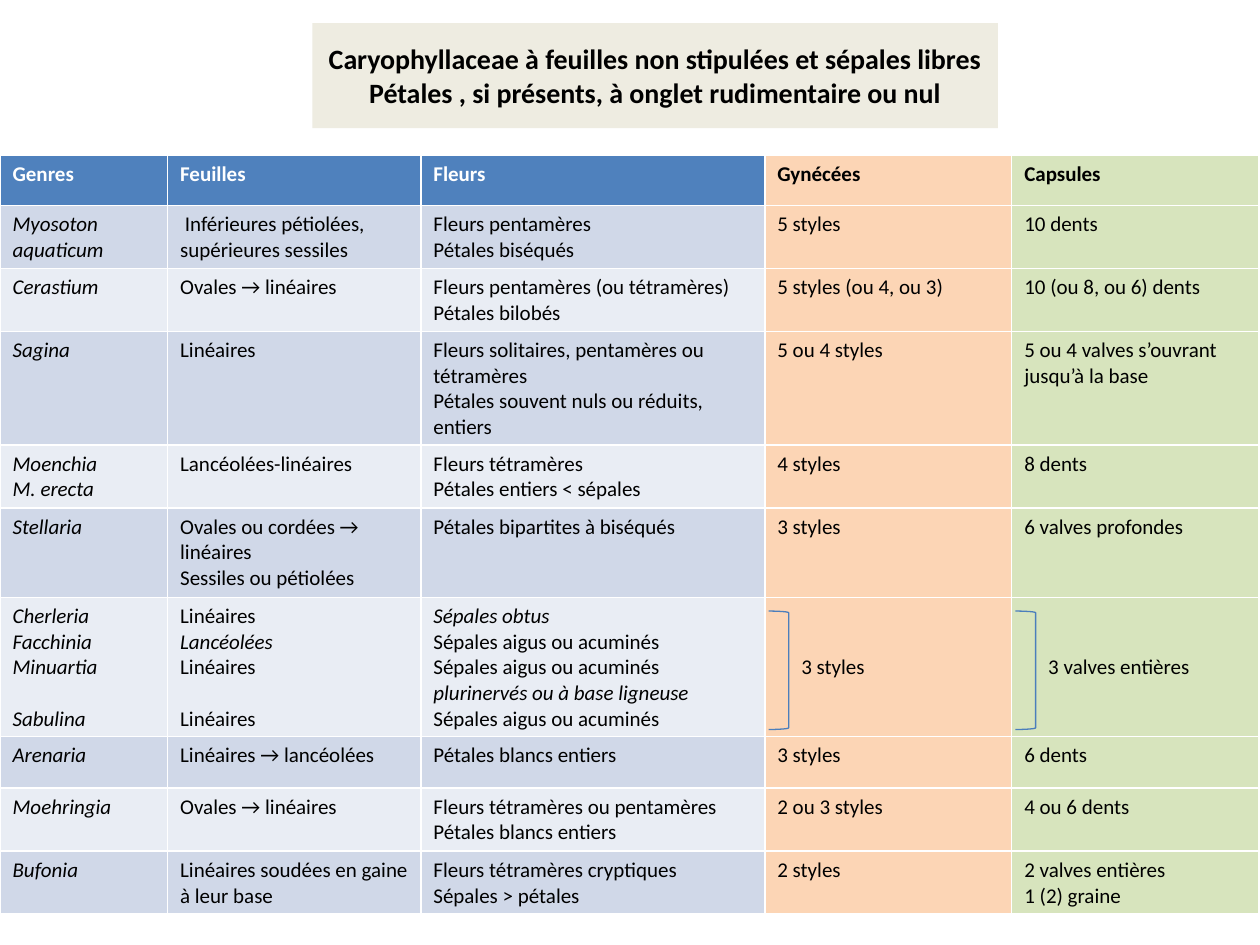
from pptx import Presentation
from pptx.dml.color import RGBColor as Rgb
from pptx.enum.shapes import MSO_SHAPE as Shape
from pptx.enum.text import MSO_ANCHOR as Anchor, MSO_AUTO_SIZE as AutoSize, PP_ALIGN as Align
from pptx.util import Inches, Pt

COLORS = {
    "text": "000000", "header_text": "FFFFFF", "title": "EEECE1", "header": "4F81BD",
    "odd": "D0D8E8", "even": "E9EDF4", "gynoecium": "FCD5B5", "capsule": "D7E4BD",
    "bracket": "4B7EBC",
}
FONT = "Calibri"
ITALIC = "*"
SKIP = "+"
LINE = Pt(14.65)

TITLE = [
    "Caryophyllaceae à feuilles non stipulées et sépales libres",
    "Pétales , si présents, à onglet rudimentaire ou nul",
]
HEADERS = ["Genres", "Feuilles", "Fleurs", "Gynécées", "Capsules"]
GENERA = [
    ["*Myosoton\n*aquaticum", " Inférieures pétiolées, supérieures sessiles",
     "Fleurs pentamères\nPétales biséqués", "5 styles", "10 dents"],
    ["*Cerastium", "Ovales → linéaires",
     "Fleurs pentamères (ou tétramères)\nPétales bilobés",
     "5 styles (ou 4, ou 3)", "10 (ou 8, ou 6) dents"],
    ["*Sagina", "Linéaires",
     "Fleurs solitaires, pentamères ou tétramères\nPétales souvent nuls ou réduits, entiers",
     "5 ou 4 styles", "5 ou 4 valves s’ouvrant jusqu’à la base"],
    ["*Moenchia\n*M. erecta", "Lancéolées-linéaires",
     "Fleurs tétramères\nPétales entiers < sépales", "4 styles", "8 dents"],
    ["*Stellaria", "Ovales ou cordées → linéaires\nSessiles ou pétiolées",
     "Pétales bipartites à biséqués", "3 styles", "6 valves profondes"],
    ["*Cherleria\n*Facchinia\n*Minuartia\n+*Sabulina",
     "Linéaires\n*Lancéolées\nLinéaires\n+Linéaires",
     "*Sépales obtus\nSépales aigus ou acuminés\nSépales aigus ou acuminés\n"
     "*plurinervés ou à base ligneuse\nSépales aigus ou acuminés",
     "3 styles", "3 valves entières"],
    ["*Arenaria", "Linéaires → lancéolées", "Pétales blancs entiers", "3 styles", "6 dents"],
    ["*Moehringia", "Ovales → linéaires",
     "Fleurs tétramères ou pentamères\nPétales blancs entiers",
     "2 ou 3 styles", "4 ou 6 dents"],
    ["*Bufonia", "Linéaires soudées en gaine à leur base",
     "Fleurs tétramères cryptiques\nSépales > pétales",
     "2 styles", "2 valves entières\n1 (2) graine"],
]
COLUMNS = [1.33, 2.01, 2.73, 1.96, 1.96]
ROWS = [0.4, 0.5, 0.5, 0.9, 0.5, 0.71, 1.1, 0.41, 0.5, 0.5]
BRACKET_ROW = 6


def write(frame, lines, size, color, bold=False):
    for index, line in enumerate(lines):
        para = frame.paragraphs[0] if index == 0 else frame.add_paragraph()
        if line.startswith(SKIP):
            para.space_before = LINE
        span = para.add_run()
        span.text = line.lstrip(SKIP + ITALIC)
        span.font.name = FONT
        span.font.size = Pt(size)
        span.font.bold = bold
        span.font.italic = ITALIC in line
        span.font.color.rgb = Rgb.from_string(COLORS[color])


def paint(item, color):
    item.fill.solid()
    item.fill.fore_color.rgb = Rgb.from_string(COLORS[color])


deck = Presentation()
deck.slide_width, deck.slide_height = Inches(10), Inches(7.5)
page = deck.slides.add_slide(deck.slide_layouts[5])

title = page.shapes.title
title.left, title.top, title.width, title.height = map(Inches, (2.48, 0.28, 5.44, 0.64))
paint(title, "title")
title.text_frame.word_wrap = False
title.text_frame.auto_size = AutoSize.SHAPE_TO_FIT_TEXT
write(title.text_frame, TITLE, 16, "text", bold=True)
for para in title.text_frame.paragraphs:
    para.alignment = Align.CENTER

table = page.shapes.add_table(
    len(ROWS), len(COLUMNS), 0, Inches(1.23), Inches(sum(COLUMNS)), Inches(sum(ROWS))
).table
for column, width in zip(table.columns, COLUMNS):
    column.width = Inches(width)
for row, height in zip(table.rows, ROWS):
    row.height = Inches(height)

for row, texts in enumerate([HEADERS] + GENERA):
    band = "header" if row == 0 else "odd" if row % 2 else "even"
    fills = [band] * 3 + ["gynoecium", "capsule"]
    for column, (text, fill) in enumerate(zip(texts, fills)):
        cell = table.cell(row, column)
        paint(cell, fill)
        color = "header_text" if fill == "header" else "text"
        write(cell.text_frame, text.split("\n"), 12, color, bold=row == 0)

for column in (3, 4):
    cell = table.cell(BRACKET_ROW, column)
    cell.vertical_anchor = Anchor.MIDDLE
    cell.margin_left = Inches(0.29)
    left = sum(COLUMNS[:column]) + 0.03
    bracket = page.shapes.add_shape(
        Shape.RIGHT_BRACKET, Inches(left), Inches(4.85), Inches(0.16), Inches(0.94)
    )
    bracket.shadow.inherit = False
    bracket.fill.background()
    bracket.line.color.rgb = Rgb.from_string(COLORS["bracket"])
    bracket.line.width = Pt(0.75)

deck.save("out.pptx")
